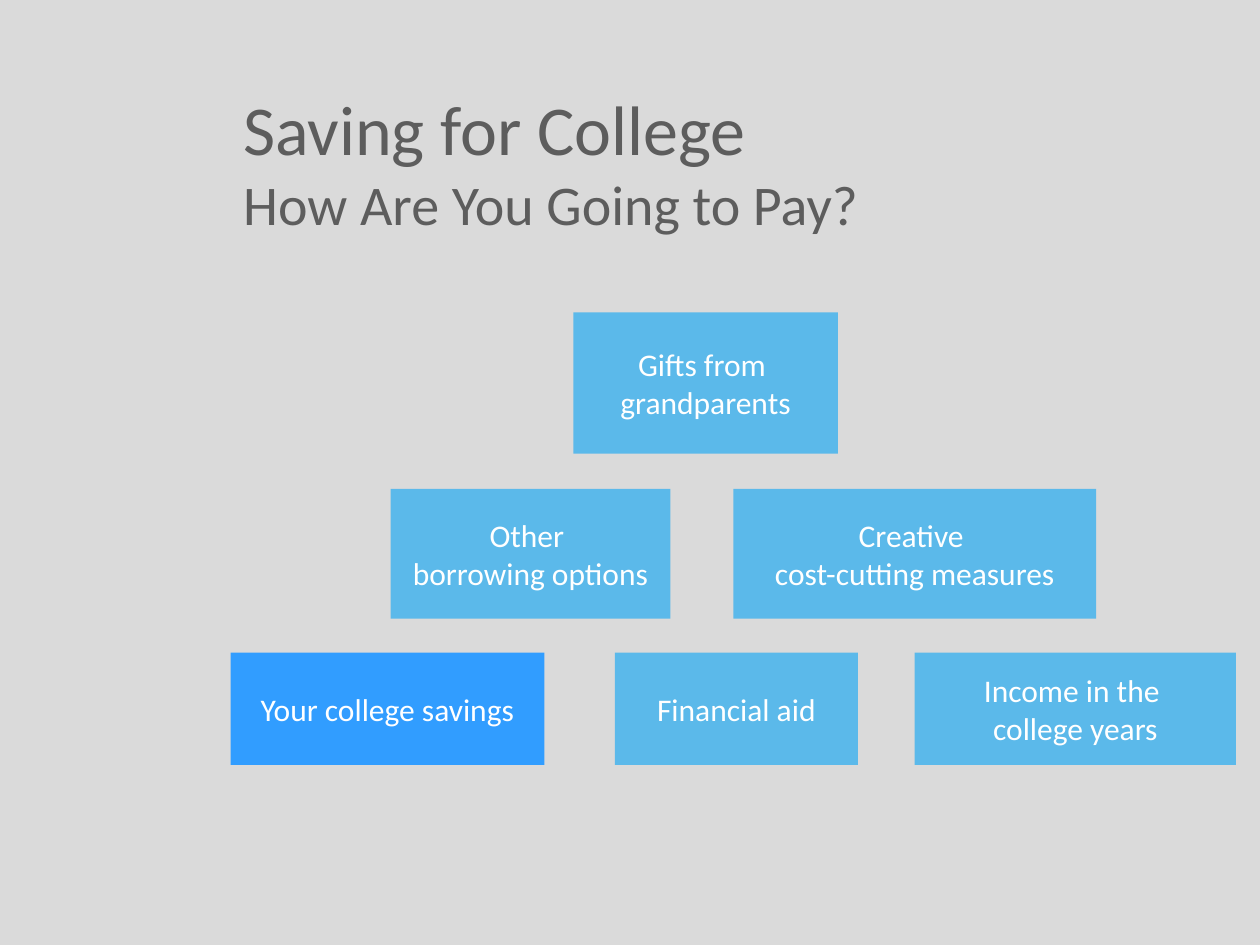
import pptx
import pptx.util
import pptx.dml.color
import pptx.enum.shapes
import pptx.enum.text

COLORS = {
    "background": "DADADA",
    "title": "5D5D5D",
    "savings": "319DFF",
    "source": "5BB9EA",
    "label": "FFFFFF",
}
LEFT = pptx.enum.text.PP_ALIGN.LEFT
CENTER = pptx.enum.text.PP_ALIGN.CENTER


def color(name):
    return pptx.dml.color.RGBColor.from_string(COLORS[name])


def write(frame, text, sizes=(18,), fill="label", align=CENTER, wrap=False):
    """Write one paragraph per line; the last size serves any further lines."""
    frame.word_wrap = wrap
    frame.auto_size = pptx.enum.text.MSO_AUTO_SIZE.NONE
    frame.vertical_anchor = pptx.enum.text.MSO_ANCHOR.MIDDLE
    frame.margin_left = frame.margin_right = pptx.util.Inches(0.1)
    frame.margin_top = frame.margin_bottom = pptx.util.Inches(0.1)
    for index, line in enumerate(text.split("\n")):
        para = frame.paragraphs[0] if index == 0 else frame.add_paragraph()
        para.alignment = align
        span = para.add_run()
        span.text = line
        span.font.name = "Calibri"
        span.font.size = pptx.util.Pt(sizes[min(index, len(sizes) - 1)])
        span.font.color.rgb = color(fill)


# Deck and page, on a grid of 100 columns by 75 rows
deck = pptx.Presentation()
deck.slide_width = pptx.util.Inches(10)
deck.slide_height = pptx.util.Inches(7.5)
column = deck.slide_width / 100
row = deck.slide_height / 75

page = deck.slides.add_slide(deck.slide_layouts[5])
page.background.fill.solid()
page.background.fill.fore_color.rgb = color("background")

# Title with its smaller second line
title = page.shapes.title
title.left, title.top = int(18.3 * column), int(6.1 * row)
title.width, title.height = int(67.5 * column), int(13.3 * row)
write(title.text_frame, "Saving for College\nHow Are You Going to Pay?",
      sizes=(40, 32), fill="title", align=LEFT, wrap=True)

# Pyramid of funding sources: top and height of each tier, then its boxes
tiers = [
    (51.8, 8.9, [
        (18.3, 24.9, "savings", "Your college savings"),
        (48.8, 19.3, "source", "Financial aid"),
        (72.6, 25.5, "source", "Income in the \ncollege years"),
    ]),
    (38.8, 10.3, [
        (31.0, 22.2, "source", "Other \nborrowing options"),
        (58.2, 28.8, "source", "Creative \ncost-cutting measures"),
    ]),
    (24.8, 11.2, [
        (45.5, 21.0, "source", "Gifts from \ngrandparents"),
    ]),
]
for top, height, boxes in tiers:
    for left, width, fill, label in boxes:
        box = page.shapes.add_shape(
            pptx.enum.shapes.MSO_SHAPE.RECTANGLE,
            int(left * column), int(top * row),
            int(width * column), int(height * row))
        box.shadow.inherit = False
        box.fill.solid()
        box.fill.fore_color.rgb = color(fill)
        box.line.fill.background()
        write(box.text_frame, label)

deck.save("out.pptx")
